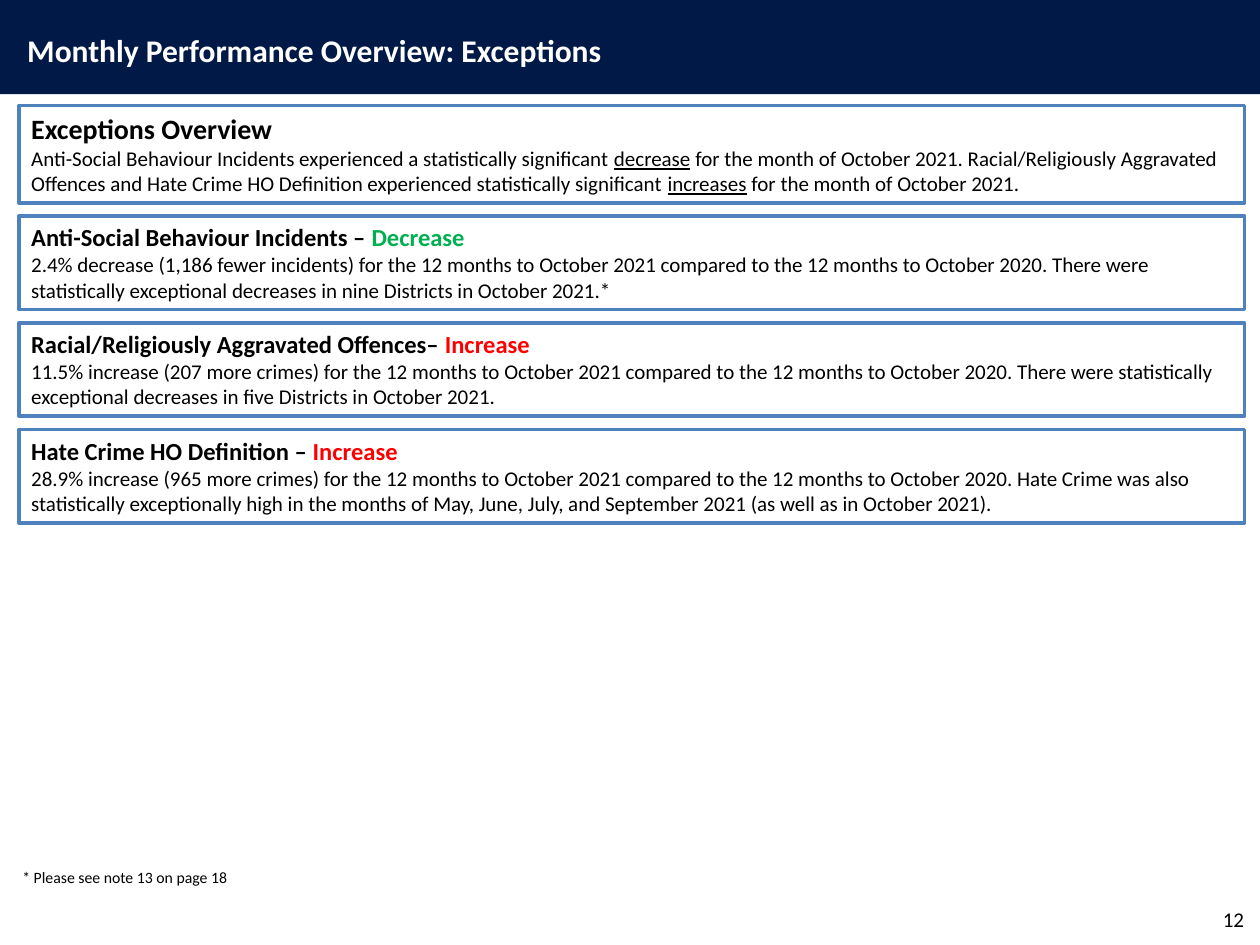
import pptx
import pptx.dml.color
import pptx.enum.shapes
import pptx.enum.text
import pptx.util
from dataclasses import dataclass

Cm = pptx.util.Cm
RGB = pptx.dml.color.RGBColor.from_string
ALIGN = pptx.enum.text.PP_ALIGN
ANCHOR = pptx.enum.text.MSO_ANCHOR
RECTANGLE = pptx.enum.shapes.MSO_SHAPE.RECTANGLE


@dataclass(frozen=True)
class Theme:
    font: str = "Calibri"
    navy: str = "001947"
    border: str = "4F81BD"
    white: str = "FFFFFF"
    black: str = "000000"
    good: str = "00B050"
    bad: str = "FF0000"
    title: int = 18
    overview: int = 16
    heading: int = 14
    body: int = 12
    note: int = 9


theme = Theme()


def style(span, size, color=theme.black, bold=False, underline=False):
    span.font.name = theme.font
    span.font.size = pptx.util.Pt(size)
    span.font.color.rgb = RGB(color)
    span.font.bold = bold
    span.font.underline = underline


def add_rectangle(left, top, width, height, fill):
    box = slide.shapes.add_shape(RECTANGLE, Cm(left), Cm(top), Cm(width), Cm(height))
    box.shadow.inherit = False
    box.fill.solid()
    box.fill.fore_color.rgb = RGB(fill)
    box.line.fill.background()
    return box


deck = pptx.Presentation()
deck.slide_width = Cm(25.4)
deck.slide_height = Cm(19.05)
slide = deck.slides.add_slide(deck.slide_layouts[6])

# Title banner
add_rectangle(0, 0, 25.4, 1.9, theme.navy)

# Title, page number and footnote
labels = [
    ("Monthly Performance Overview: Exceptions", (0.3, 0.51, 14.4, 1.02),
     theme.title, theme.white, True, ALIGN.LEFT, ANCHOR.TOP),
    ("12", (19.41, 18.01, 5.92, 1.02),
     theme.body, theme.black, False, ALIGN.RIGHT, ANCHOR.MIDDLE),
    ("* Please see note 13 on page 18", (0.2, 17.37, 12.75, 0.64),
     theme.note, theme.black, False, ALIGN.LEFT, ANCHOR.TOP),
]
for text, place, size, color, bold, align, anchor in labels:
    box = slide.shapes.add_textbox(*[Cm(length) for length in place])
    box.text_frame.word_wrap = True
    box.text_frame.vertical_anchor = anchor
    para = box.text_frame.paragraphs[0]
    para.text = text
    para.alignment = align
    style(para.runs[0], size, color, bold)

# Exception cards: height, heading size, heading, trend, trend colour, body
# Every second piece of a body is underlined
cards = [
    (1.96, theme.overview, "Exceptions Overview", "", theme.black,
     ["Anti-Social Behaviour Incidents experienced a statistically significant ",
      "decrease",
      " for the month of October 2021. Racial/Religiously Aggravated Offences and "
      "Hate Crime HO Definition experienced statistically significant ",
      "increases",
      " for the month of October 2021."]),
    (1.88, theme.heading, "Anti-Social Behaviour Incidents – ", "Decrease", theme.good,
     ["2.4% decrease (1,186 fewer incidents) for the 12 months to October 2021 "
      "compared to the 12 months to October 2020. There were statistically "
      "exceptional decreases in nine Districts in October 2021.*"]),
    (1.88, theme.heading, "Racial/Religiously Aggravated Offences– ", "Increase", theme.bad,
     ["11.5% increase (207 more crimes) for the 12 months to October 2021 compared "
      "to the 12 months to October 2020. There were statistically exceptional "
      "decreases in five Districts in October 2021."]),
    (1.88, theme.heading, "Hate Crime HO Definition – ", "Increase", theme.bad,
     ["28.9% increase (965 more crimes) for the 12 months to October 2021 compared "
      "to the 12 months to October 2020. Hate Crime was also statistically "
      "exceptionally high in the months of May, June, July, and September 2021 "
      "(as well as in October 2021)."]),
]
card_gap = 0.27
top = 2.13
for height, heading_size, heading, trend, trend_color, body in cards:
    box = add_rectangle(0.38, top, 24.71, height, theme.white)
    box.line.color.rgb = RGB(theme.border)
    box.line.width = pptx.util.Pt(2)
    frame = box.text_frame
    frame.word_wrap = True
    frame.vertical_anchor = ANCHOR.TOP

    para = frame.paragraphs[0]
    para.text = heading
    para.alignment = ALIGN.LEFT
    style(para.runs[0], heading_size, bold=True)
    if trend:
        span = para.add_run()
        span.text = trend
        style(span, heading_size, trend_color, bold=True)

    para = frame.add_paragraph()
    para.alignment = ALIGN.LEFT
    for index, piece in enumerate(body):
        span = para.add_run()
        span.text = piece
        style(span, theme.body, underline=index % 2 == 1)
    top += height + card_gap

deck.save("out.pptx")
